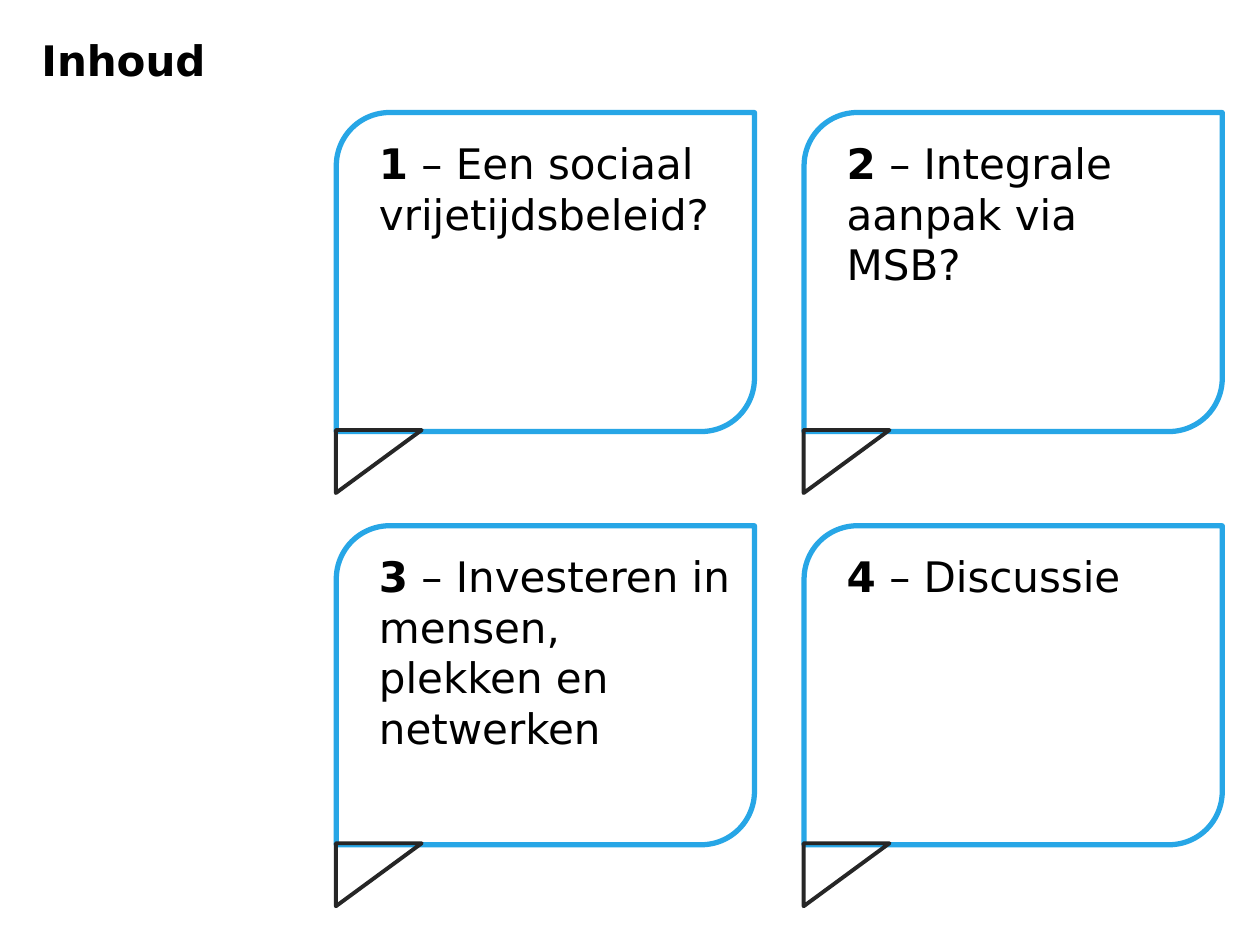
from dataclasses import dataclass

from pptx import Presentation
from pptx import util as u
from pptx.dml.color import RGBColor
from pptx.enum import shapes, text

FONT = "DejaVu Sans"
BLUE, DARK, BLACK = "27A6E6", "262626", "000000"

# Grid of cards, in cm
LEFT, TOP = 6.78, 2.27
STEP_X, STEP_Y = 9.43, 8.33
CARD_W, CARD_H = 8.43, 6.43


@dataclass
class Card:
    num: str
    label: str
    lines: int


CARDS = [
    Card("1", " – Een sociaal vrijetijdsbeleid?", 2),
    Card("2", " – Integrale aanpak via MSB?", 3),
    Card("3", " – Investeren in mensen, plekken en netwerken", 4),
    Card("4", " – Discussie", 1),
]


def color(code: str) -> RGBColor:
    return RGBColor.from_string(code)


def style(run, bold: bool) -> None:
    run.font.name = FONT
    run.font.size = u.Pt(24)
    run.font.bold = bold
    run.font.color.rgb = color(BLACK)


def outline(slide, kind, x: float, y: float, w: float, h: float,
            code: str, width: float):
    """Draw an unfilled shape."""
    shape = slide.shapes.add_shape(kind, u.Cm(x), u.Cm(y), u.Cm(w), u.Cm(h))
    shape.shadow.inherit = False
    shape.fill.background()
    shape.line.color.rgb = color(code)
    shape.line.width = u.Pt(width)
    return shape


def draw_card(slide, card: Card, x: float, y: float) -> None:
    # Speech bubble with its tail
    outline(slide, shapes.MSO_SHAPE.ROUND_2_DIAG_RECTANGLE,
            x, y, CARD_W, CARD_H, BLUE, 3)
    tail = outline(slide, shapes.MSO_SHAPE.RIGHT_TRIANGLE,
                   x + 0.22, y + 6.17, 1.27, 1.73, DARK, 2.25)
    tail.rotation = 90

    # Number and topic
    box = slide.shapes.add_textbox(u.Cm(x + 0.61), u.Cm(y + 0.38), u.Cm(7.6),
                                   u.Cm(0.25 + 1.02 * card.lines))
    frame = box.text_frame
    frame.word_wrap = True
    frame.auto_size = text.MSO_AUTO_SIZE.SHAPE_TO_FIT_TEXT
    par = frame.paragraphs[0]
    for words, bold in ((card.num, True), (card.label, False)):
        run = par.add_run()
        run.text = words
        style(run, bold)


def draw_title(slide, words: str) -> None:
    title = slide.shapes.title
    title.left, title.top = u.Cm(0.58), u.Cm(0.56)
    title.width, title.height = u.Cm(9.35), u.Cm(1.27)
    frame = title.text_frame
    frame.text = words
    frame.vertical_anchor = text.MSO_ANCHOR.TOP
    frame.auto_size = text.MSO_AUTO_SIZE.NONE
    par = frame.paragraphs[0]
    par.alignment = text.PP_ALIGN.LEFT
    style(par.runs[0], True)


def main() -> None:
    deck = Presentation()
    deck.slide_width, deck.slide_height = u.Cm(25.4), u.Cm(19.05)
    slide = deck.slides.add_slide(deck.slide_layouts[5])
    draw_title(slide, "Inhoud")
    for i, card in enumerate(CARDS):
        row, col = divmod(i, 2)
        draw_card(slide, card, LEFT + col * STEP_X, TOP + row * STEP_Y)
    deck.save("out.pptx")


if __name__ == "__main__":
    main()
